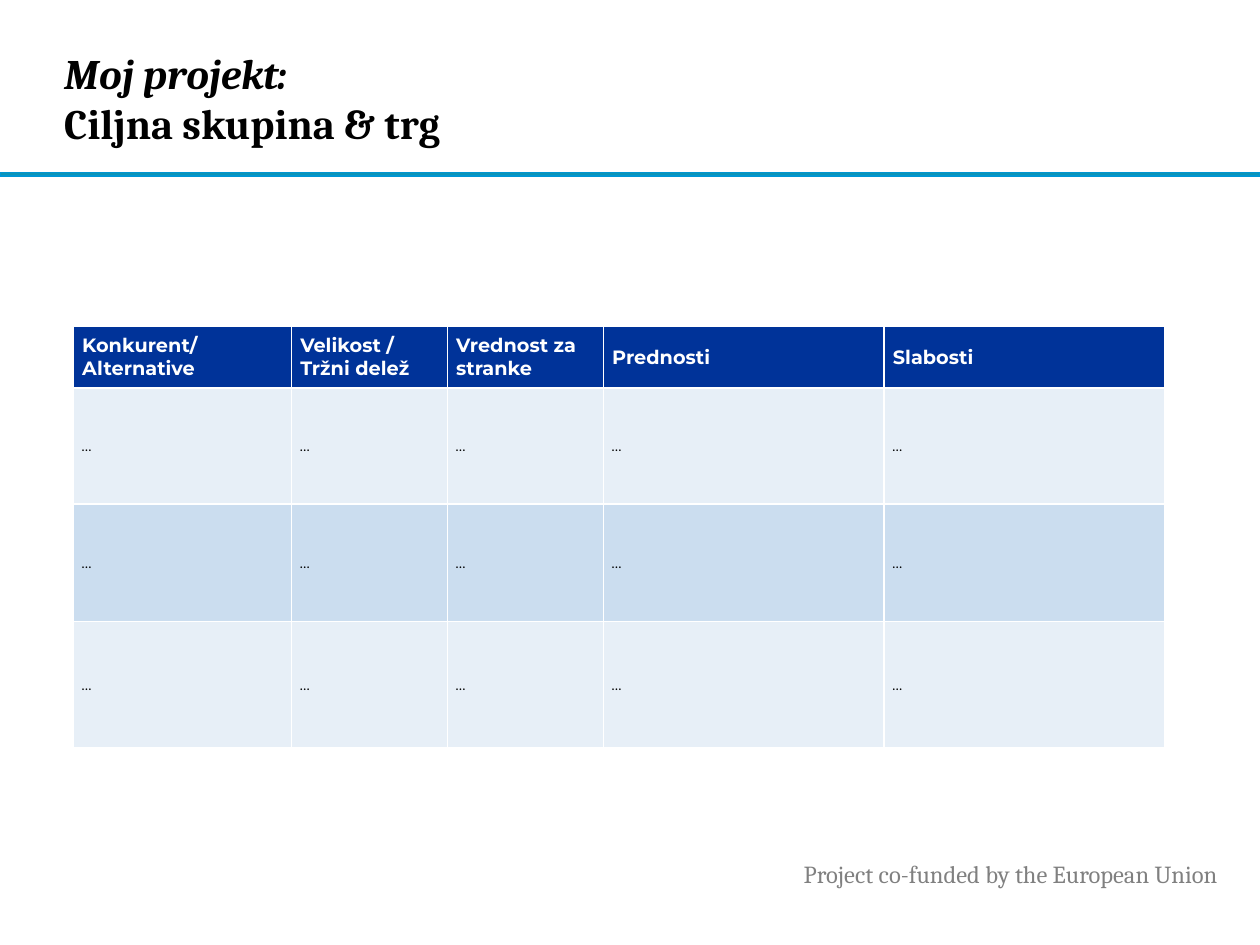
from lxml import etree
from pptx import Presentation
from pptx.dml.color import RGBColor
from pptx.enum.shapes import MSO_SHAPE
from pptx.enum.text import MSO_ANCHOR, MSO_AUTO_SIZE, PP_ALIGN
from pptx.oxml.ns import qn
from pptx.util import Pt

RECTANGLE = MSO_SHAPE.RECTANGLE
MIDDLE = MSO_ANCHOR.MIDDLE
NO_FIT = MSO_AUTO_SIZE.NONE
LEFT = PP_ALIGN.LEFT

TITLE = [("Moj projekt:", True), ("Ciljna skupina & trg", False)]
FOOTER = "Project co-funded by the European Union"
HEADERS = [
    ["Konkurent/", "Alternative"],
    ["Velikost /", "Tržni delež"],
    ["Vrednost za stranke"],
    ["Prednosti"],
    ["Slabosti"],
]
ROWS = [HEADERS] + [[["…"]] * len(HEADERS)] * 3
COLUMN_WIDTHS = [124.6, 89.1, 89.1, 160.5, 160.5]
ROW_HEIGHTS = [35, 66.5, 67, 72]
HEADER_FILL = "003399"
BAND_FILLS = ["CBDDEF", "E7EFF7"]


def color(value):
    return RGBColor.from_string(value)


def add_span(para, text, font, size, tint, bold=False, italic=False):
    span = para.add_run()
    span.text = text
    span.font.name = font
    span.font.size = Pt(size)
    span.font.color.rgb = color(tint)
    span.font.bold = bold
    span.font.italic = italic


def place(shape, left, top, width, height):
    shape.left, shape.top = Pt(left), Pt(top)
    shape.width, shape.height = Pt(width), Pt(height)


def set_borders(cell, tint, width):
    properties = cell._tc.get_or_add_tcPr()
    for index, side in enumerate(("a:lnL", "a:lnR", "a:lnT", "a:lnB")):
        border = etree.Element(qn(side), w=str(Pt(width)))
        fill = etree.SubElement(border, qn("a:solidFill"))
        etree.SubElement(fill, qn("a:srgbClr"), val=tint)
        properties.insert(index, border)


def add_rule(page):
    rule = page.shapes.add_shape(RECTANGLE, Pt(0), Pt(98.6), Pt(720), Pt(2.2))
    rule.shadow.inherit = False
    rule.fill.solid()
    rule.fill.fore_color.rgb = color("0C94B7")
    rule.line.color.rgb = color("0096D3")
    rule.line.width = Pt(1)


def add_footer(page):
    box = page.shapes.add_textbox(Pt(452.2), Pt(487.4), Pt(263.5), Pt(24.5))
    box.text_frame.word_wrap = True
    add_span(box.text_frame.paragraphs[0], FOOTER, "Cambria", 14, "808080")


def fill_title(page):
    title = page.shapes.title
    place(title, 36.7, 13, 523.4, 85.7)
    frame = title.text_frame
    frame.auto_size = NO_FIT
    frame.word_wrap = True
    frame.vertical_anchor = MIDDLE
    frame.margin_left = frame.margin_right = 0
    frame.margin_top = frame.margin_bottom = 0
    para = frame.paragraphs[0]
    para.alignment = LEFT
    for index, (text, italic) in enumerate(TITLE):
        if index:
            para.add_line_break()
        add_span(para, text, "Cambria", 24, "000000", bold=True, italic=italic)


def fill_cell(cell, lines, row):
    header = row == 0
    cell.fill.solid()
    cell.fill.fore_color.rgb = color(HEADER_FILL if header else BAND_FILLS[row % 2])
    set_borders(cell, "FFFFFF", 1)
    cell.vertical_anchor = MIDDLE
    cell.margin_left = cell.margin_right = Pt(5)
    cell.margin_top = cell.margin_bottom = 0
    frame = cell.text_frame
    for index, line in enumerate(lines):
        para = frame.add_paragraph() if index else frame.paragraphs[0]
        if header:
            add_span(para, line, "Montserrat", 11, "FFFFFF", bold=True)
        else:
            add_span(para, line, "Montserrat", 9, "000000", italic=True)


def add_competitors(page):
    table = page.shapes.add_table(
        len(ROWS), len(HEADERS), Pt(42), Pt(186.6),
        Pt(sum(COLUMN_WIDTHS)), Pt(sum(ROW_HEIGHTS)),
    ).table
    for column, width in zip(table.columns, COLUMN_WIDTHS):
        column.width = Pt(width)
    for row, height in zip(table.rows, ROW_HEIGHTS):
        row.height = Pt(height)
    for row, cells in enumerate(ROWS):
        for column, lines in enumerate(cells):
            fill_cell(table.cell(row, column), lines, row)


def main():
    deck = Presentation()
    deck.slide_width, deck.slide_height = Pt(720), Pt(540)
    page = deck.slides.add_slide(deck.slide_layouts[5])
    add_rule(page)
    add_footer(page)
    fill_title(page)
    add_competitors(page)
    deck.save("out.pptx")


if __name__ == "__main__":
    main()
